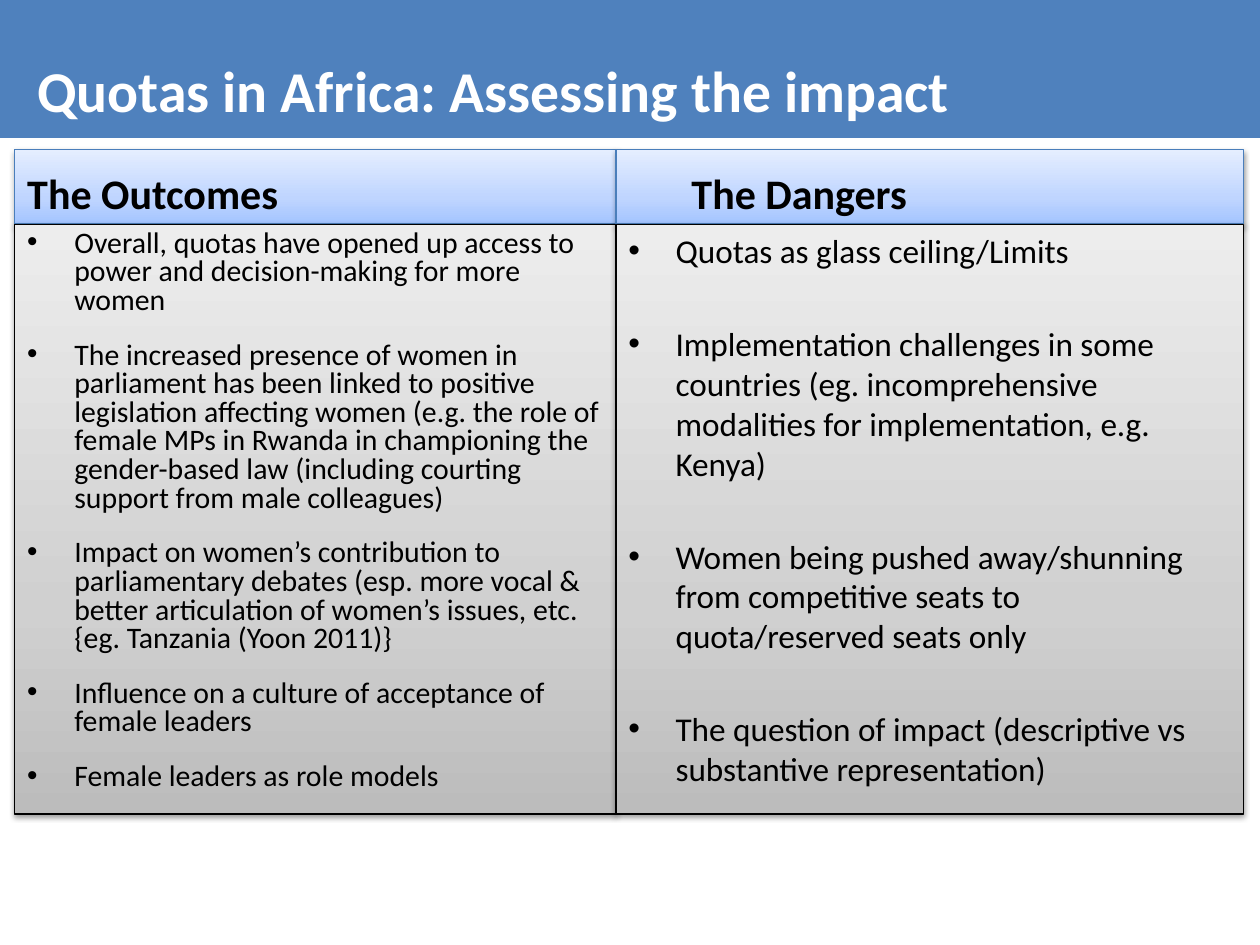
from dataclasses import dataclass

from pptx import Presentation
from pptx.dml.color import RGBColor as Rgb
from pptx.enum.shapes import MSO_SHAPE as Kind
from pptx.enum.text import MSO_ANCHOR as Anchor, PP_ALIGN as Align
from pptx.oxml import parse_xml
from pptx.oxml.ns import nsdecls
from pptx.util import Cm, Pt

HUES = {"bar": "4F81BD", "edge": "4A7EBB", "ink": "000000", "title": "FFFFFF"}
FADES = {
    "head": ("A3C4FF", "BFD5FF", "E5EEFF"),
    "body": ("BCBCBC", "D0D0D0", "EDEDED"),
}
STOPS = (0, 35000, 100000)
FONT = "Calibri"
LEFT, TOP = 0.3, 3.02
HEAD, BODY = 1.5, 11.89
INDENT = Cm(0.95)


@dataclass
class Column:
    """A heading with its list of points."""

    title: str
    shift: float
    width: float
    size: int
    pitch: float
    gap: float
    points: tuple[str, ...]


COLS = (
    Column("The Outcomes", 0, 12.12, 17, 0.8, 15, (
        "Overall, quotas have opened up access to power and decision-making "
        "for more women",
        "The increased presence of women in parliament has been linked to "
        "positive legislation affecting women (e.g. the role of female MPs in "
        "Rwanda in championing the gender-based law (including courting "
        "support from male colleagues)",
        "Impact on women’s contribution to parliamentary debates (esp. more "
        "vocal & better articulation of women’s issues, etc. {eg. Tanzania "
        "(Yoon 2011)}",
        "Influence on a culture of acceptance of female leaders",
        "Female leaders as role models",
    )),
    Column("The Dangers", 1.27, 12.65, 19, 1, 30.3, (
        "Quotas as glass ceiling/Limits",
        "Implementation challenges in some countries (eg. incomprehensive "
        "modalities for implementation, e.g. Kenya)",
        "Women being pushed away/shunning from competitive seats to "
        "quota/reserved seats only",
        "The question of impact (descriptive vs substantive representation)",
    )),
)


def add_box(slide, x: float, y: float, w: float, h: float, edge: str, line: float):
    """Add an outlined rectangle ready for left-aligned text."""
    box = slide.shapes.add_shape(Kind.RECTANGLE, Cm(x), Cm(y), Cm(w), Cm(h))
    box.shadow.inherit = False
    box.line.color.rgb = Rgb.from_string(HUES[edge])
    box.line.width = Pt(line)
    box.text_frame.word_wrap = True
    return box


def add_fade(box, fade: str) -> None:
    """Give a box an upward gradient and a soft shadow."""
    box.fill.gradient()
    box.fill.gradient_angle = 90
    props = box.element.spPr
    stops = props.find(".//{*}gsLst")
    for stop in list(stops):
        stops.remove(stop)
    for pos, hue in zip(STOPS, FADES[fade]):
        stops.append(parse_xml(
            f'<a:gs {nsdecls("a")} pos="{pos}"><a:srgbClr val="{hue}"/></a:gs>'))
    props.find("{*}effectLst").append(parse_xml(
        f'<a:outerShdw {nsdecls("a")} blurRad="40000" dist="20000" dir="5400000" '
        f'rotWithShape="0"><a:srgbClr val="{HUES["ink"]}"><a:alpha val="38000"/>'
        '</a:srgbClr></a:outerShdw>'))


def add_run(para, text: str, size: int, hue: str, bold: bool = False) -> None:
    """Add one styled run to a left-aligned paragraph."""
    para.alignment = Align.LEFT
    run = para.add_run()
    run.text = text
    run.font.name = FONT
    run.font.size = Pt(size)
    run.font.bold = bold
    run.font.color.rgb = Rgb.from_string(HUES[hue])


def add_point(para, text: str, col: Column, first: bool) -> None:
    """Fill a paragraph as a bulleted point."""
    props = para._p.get_or_add_pPr()
    props.set("marL", str(INDENT))
    props.set("indent", str(-INDENT))
    props.append(parse_xml(f'<a:buFont {nsdecls("a")} typeface="Arial"/>'))
    props.append(parse_xml(f'<a:buChar {nsdecls("a")} char="•"/>'))
    para.line_spacing = col.pitch
    para.space_before = Pt(0 if first else col.gap)
    add_run(para, text, col.size, "ink")


def add_column(slide, col: Column, x: float) -> None:
    """Draw the heading box and the list box of a column."""
    head = add_box(slide, x, TOP, col.width, HEAD, "edge", 0.75)
    add_fade(head, "head")
    frame = head.text_frame
    frame.vertical_anchor = Anchor.BOTTOM
    frame.margin_left = Cm(0.25 + col.shift)
    add_run(frame.paragraphs[0], col.title, 24, "ink", True)

    body = add_box(slide, x, TOP + HEAD, col.width, BODY, "ink", 0.75)
    add_fade(body, "body")
    frame = body.text_frame
    frame.vertical_anchor = Anchor.TOP
    for i, text in enumerate(col.points):
        para = frame.add_paragraph() if i else frame.paragraphs[0]
        add_point(para, text, col, i == 0)


def add_title(slide) -> None:
    """Draw the title bar."""
    bar = add_box(slide, 0, 0, 25.4, 2.74, "bar", 2)
    bar.fill.solid()
    bar.fill.fore_color.rgb = Rgb.from_string(HUES["bar"])
    frame = bar.text_frame
    frame.vertical_anchor = Anchor.BOTTOM
    frame.margin_left = Cm(0.75)
    frame.margin_bottom = Cm(0.25)
    para = frame.paragraphs[0]
    para.line_spacing = 0.8
    add_run(para, "Quotas in Africa: Assessing the impact", 33, "title", True)


def main() -> None:
    """Build and save the slide."""
    deck = Presentation()
    deck.slide_width, deck.slide_height = Cm(25.4), Cm(19.05)
    slide = deck.slides.add_slide(deck.slide_layouts[6])
    x = LEFT
    for col in COLS:
        add_column(slide, col, x)
        x += col.width
    add_title(slide)
    deck.save("out.pptx")


if __name__ == "__main__":
    main()
